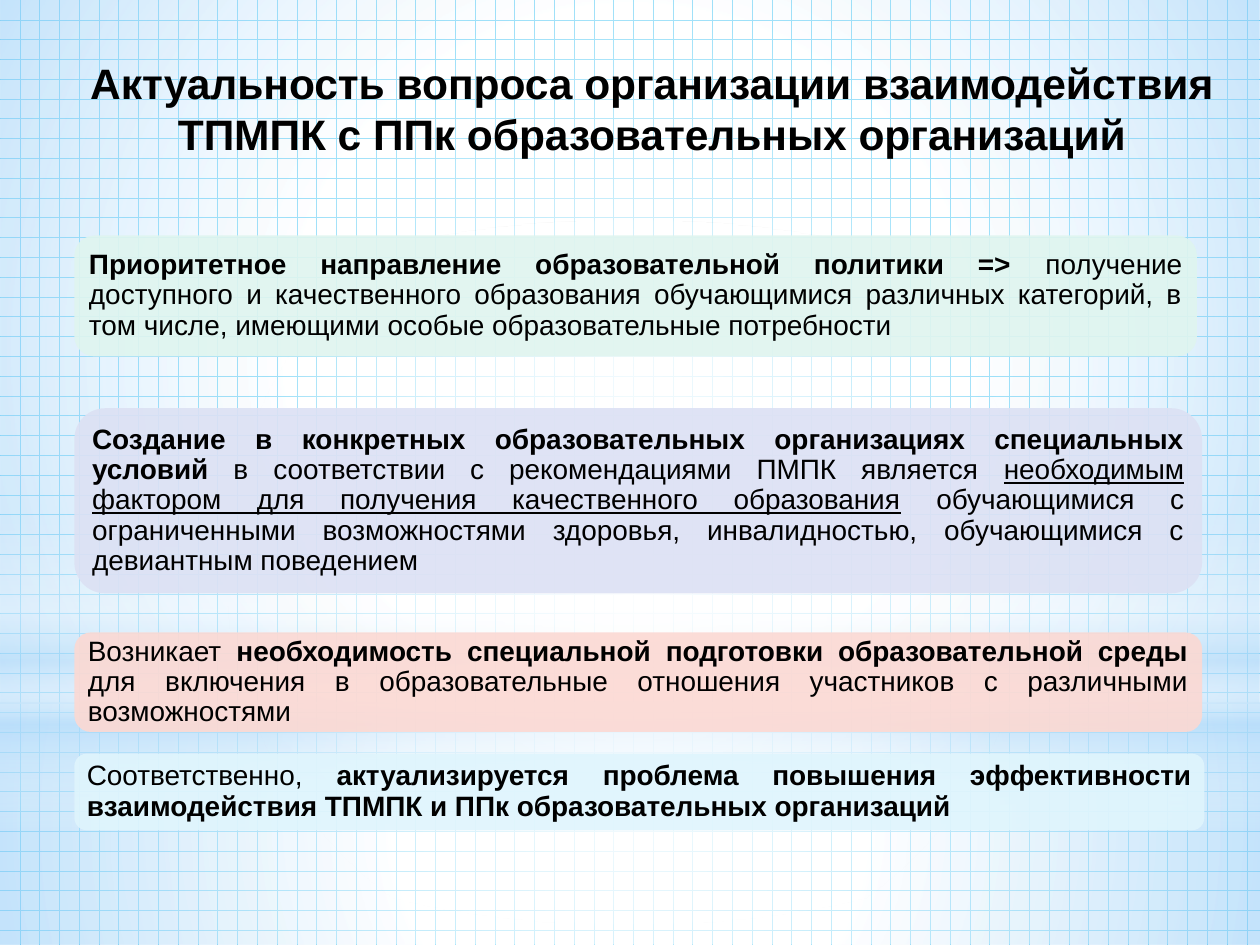
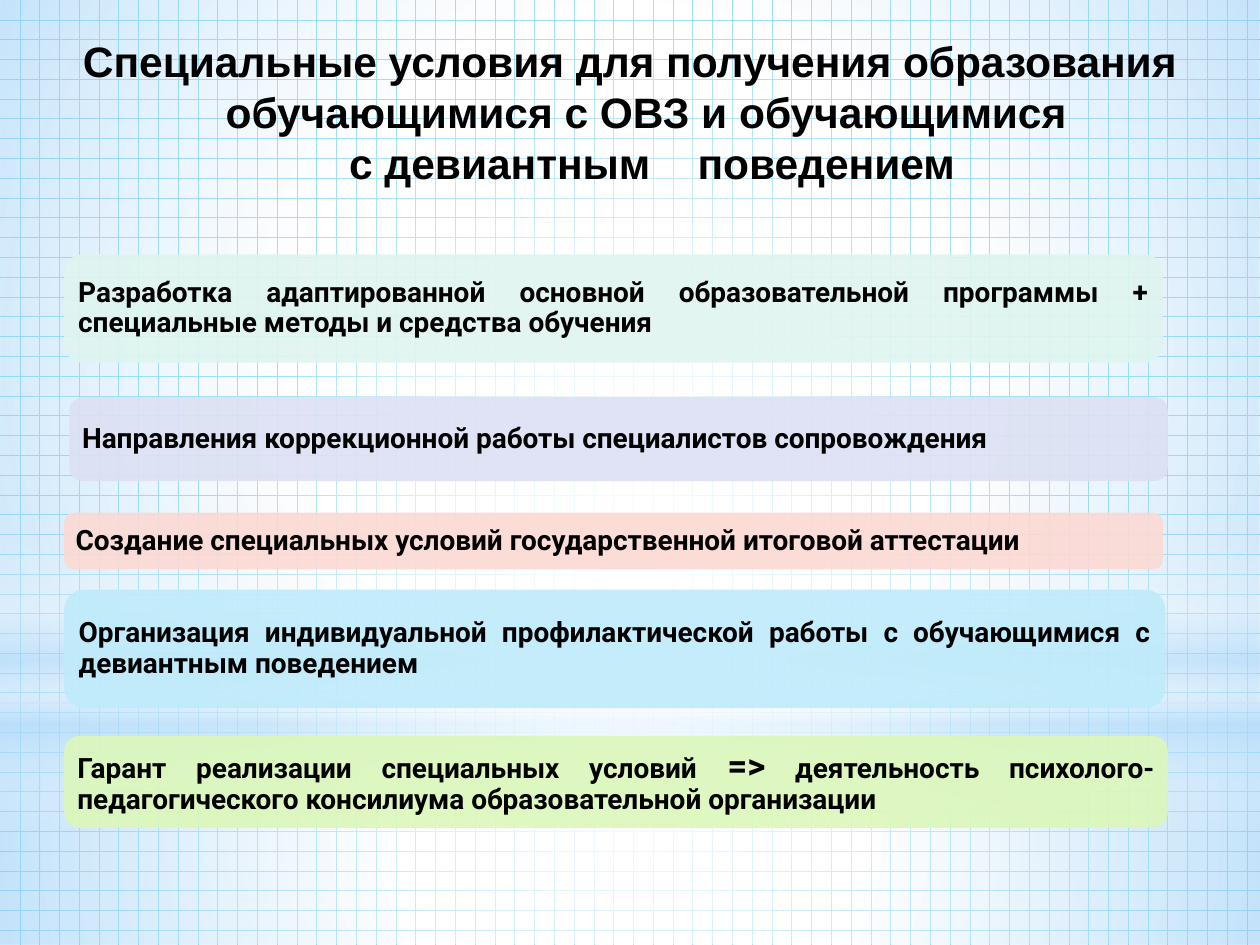
import pptx
import pptx.util
import pptx.dml.color
import pptx.enum.dml
import pptx.enum.shapes
import pptx.enum.text
from lxml import etree
from pptx.oxml.ns import qn

Pt = pptx.util.Pt
SHAPES = pptx.enum.shapes.MSO_SHAPE
ALIGN = pptx.enum.text.PP_ALIGN
ANCHOR = pptx.enum.text.MSO_ANCHOR
WIDTH, HEIGHT = 720, 540

COLORS = {
    "text": "000000", "paper": "FFFFFF", "grid": "00B0F0", "haze": "B4DCFA",
    "mint": "DFF5EF", "lavender": "DCE1F4", "rose": "FCD9D3",
    "ice": "DFF5FD", "sky": "BFEBFA", "lime": "DCF7BA",
}

# Backdrop layers: shape, top, height, linear angle (None is radial),
# gradient stops as (position, colour, opacity), all in percent
BACKDROP = [
    (SHAPES.RECTANGLE, 401.76, 138.24, None,
     [(0, "paper", 91), (37, "paper", 76), (100, "haze", 79)]),
    (SHAPES.RECTANGLE, 0, 401.76, None,
     [(0, "paper", 89), (48, "paper", 62), (100, "haze", 79)]),
    (SHAPES.RECTANGLE, 296.64, 180, 90,
     [(0, "paper", 0), (29, "paper", 30), (45, "haze", 40),
      (55, "paper", 26), (65, "haze", 60), (100, "paper", 0)]),
    (SHAPES.OVAL, 126, 401.76, None, [(0, "paper", 100), (56, "paper", 0)]),
]


def rgb(name):
    return pptx.dml.color.RGBColor.from_string(COLORS[name])


def add_node(parent, tag, **attributes):
    node = etree.SubElement(parent, qn(tag))
    for key, value in attributes.items():
        node.set(key, str(value))
    return node


class Deck:
    def __init__(self):
        self.presentation = pptx.Presentation()
        self.presentation.slide_width = Pt(WIDTH)
        self.presentation.slide_height = Pt(HEIGHT)
        self.slide = None

    def new_slide(self):
        self.slide = self.presentation.slides.add_slide(
            self.presentation.slide_layouts[6])
        fill = self.slide.background.fill
        fill.patterned()
        fill.pattern = pptx.enum.dml.MSO_PATTERN.DOTTED_GRID
        fill.fore_color.rgb = rgb("grid")
        fill.back_color.rgb = rgb("paper")
        for kind, top, height, angle, stops in BACKDROP:
            shape = self.shape(kind, 0, top, WIDTH, height)
            self.gradient(shape, angle, stops)

    def shape(self, kind, left, top, width, height):
        shape = self.slide.shapes.add_shape(
            kind, Pt(left), Pt(top), Pt(width), Pt(height))
        shape.shadow.inherit = False
        shape.line.fill.background()
        return shape

    def gradient(self, shape, angle, stops):
        gradient = etree.Element(qn("a:gradFill"), rotWithShape="1")
        stop_list = add_node(gradient, "a:gsLst")
        for position, color, opacity in stops:
            stop = add_node(stop_list, "a:gs", pos=position * 1000)
            value = add_node(stop, "a:srgbClr", val=COLORS[color])
            add_node(value, "a:alpha", val=opacity * 1000)
        if angle is None:
            circle = add_node(gradient, "a:path", path="circle")
            add_node(circle, "a:fillToRect", l=50000, t=50000, r=50000, b=50000)
        else:
            add_node(gradient, "a:lin", ang=angle * 60000, scaled=0)
        shape.element.spPr.find(qn("a:prstGeom")).addnext(gradient)

    def fill_paragraph(self, paragraph, runs, font_name, size, align, spacing):
        paragraph.alignment = align
        paragraph.line_spacing = spacing
        paragraph.font.name = font_name
        paragraph.font.size = Pt(size)
        paragraph.font.color.rgb = rgb("text")
        for text, style in runs:
            if text == "\n":
                paragraph.add_line_break()
                continue
            run = paragraph.add_run()
            run.text = text
            run.font.bold = "bold" in style
            if "underline" in style:
                run.font.underline = True
            if "large" in style:
                run.font.size = Pt(20)
            if "wide" in style:
                run.font._element.set("spc", "2025")

    def title(self, top, runs, first_indent):
        box = self.slide.shapes.add_textbox(0, Pt(top), Pt(WIDTH), Pt(90))
        frame = box.text_frame
        frame.word_wrap = True
        frame.margin_top = frame.margin_bottom = 0
        paragraph = frame.paragraphs[0]
        self.fill_paragraph(
            paragraph, runs, "Arial", 24.3, ALIGN.CENTER, Pt(29.1))
        properties = paragraph._p.get_or_add_pPr()
        properties.set("marL", str(Pt(25.2)))
        properties.set("indent", str(Pt(first_indent)))

    def card(self, place, color, runs, font_name):
        shape = self.shape(SHAPES.ROUNDED_RECTANGLE, *place)
        shape.fill.solid()
        shape.fill.fore_color.rgb = rgb(color)
        value = shape.element.spPr.find(".//" + qn("a:srgbClr"))
        add_node(value, "a:alpha", val=90000)
        frame = shape.text_frame
        frame.word_wrap = True
        frame.vertical_anchor = ANCHOR.MIDDLE
        frame.margin_left = frame.margin_right = Pt(5)
        frame.margin_top = frame.margin_bottom = Pt(5)
        self.fill_paragraph(
            frame.paragraphs[0], runs, font_name, 16, ALIGN.JUSTIFY, 0.9)


def relevance_slide(deck):
    deck.new_slide()
    deck.title(32.5, [("Актуальность вопроса организации взаимодействия "
                       "ТПМПК с ППк образовательных организаций", "bold")], 0)
    cards = [
        (134.6, 641.5, 69.1, "mint", [
            ("Приоритетное направление образовательной политики => ", "bold"),
            ("получение доступного и качественного образования обучающимися "
             "различных категорий, в том числе, имеющими особые "
             "образовательные потребности", "")]),
        (233.3, 644.4, 105.8, "lavender", [
            ("Создание в конкретных образовательных организациях "
             "специальных условий ", "bold"),
            ("в соответствии с рекомендациями ПМПК является ", ""),
            ("необходимым", "underline"),
            (" ", ""),
            ("фактором для получения качественного образования", "underline"),
            (" обучающимися с ограниченными возможностями здоровья, "
             "инвалидностью, обучающимися с девиантным поведением", "")]),
        (361.4, 644.4, 56.9, "rose", [
            ("Возникает ", ""),
            ("необходимость специальной подготовки образовательной среды ",
             "bold"),
            ("для включения в образовательные отношения участников "
             "с различными возможностями", "")]),
        (430.6, 645.8, 43.9, "ice", [
            ("Соответственно, ", ""),
            ("актуализируется проблема повышения эффективности взаимодействия "
             "ТПМПК и ППк образовательных организаций", "bold")]),
    ]
    for top, width, height, color, runs in cards:
        deck.card((42.5, top, width, height), color, runs, "Arial")


def conditions_slide(deck):
    deck.new_slide()
    deck.title(20, [
        ("Специальные условия для получения образования "
         "обучающимися с ОВЗ и обучающимися ", "bold"),
        ("\n", ""),
        ("с девиантным", "bold"), (" ", "bold wide"), ("поведением", "bold"),
    ], -25.2)
    cards = [
        (36.7, 145.4, 627.8, 61.9, "mint", [
            ("Разработка адаптированной основной образовательной программы + "
             "специальные методы и средства обучения", "bold")]),
        (39.6, 226.8, 627.8, 48.2, "lavender", [
            ("Направления коррекционной работы специалистов сопровождения",
             "bold")]),
        (36.7, 293, 627.8, 32.4, "rose", [
            ("Создание специальных условий государственной итоговой аттестации",
             "bold")]),
        (36.7, 337, 629.3, 67.7, "sky", [
            ("Организация индивидуальной профилактической работы "
             "с обучающимися с девиантным поведением", "bold")]),
        (36.7, 420.5, 630.7, 52.6, "lime", [
            ("Гарант реализации специальных условий ", "bold"),
            ("=>", "bold large"),
            (" деятельность психолого-педагогического консилиума "
             "образовательной организации", "bold")]),
    ]
    for left, top, width, height, color, runs in cards:
        deck.card((left, top, width, height), color, runs, "Roboto")


def main():
    deck = Deck()
    relevance_slide(deck)
    conditions_slide(deck)
    deck.presentation.save("out.pptx")


if __name__ == "__main__":
    main()
